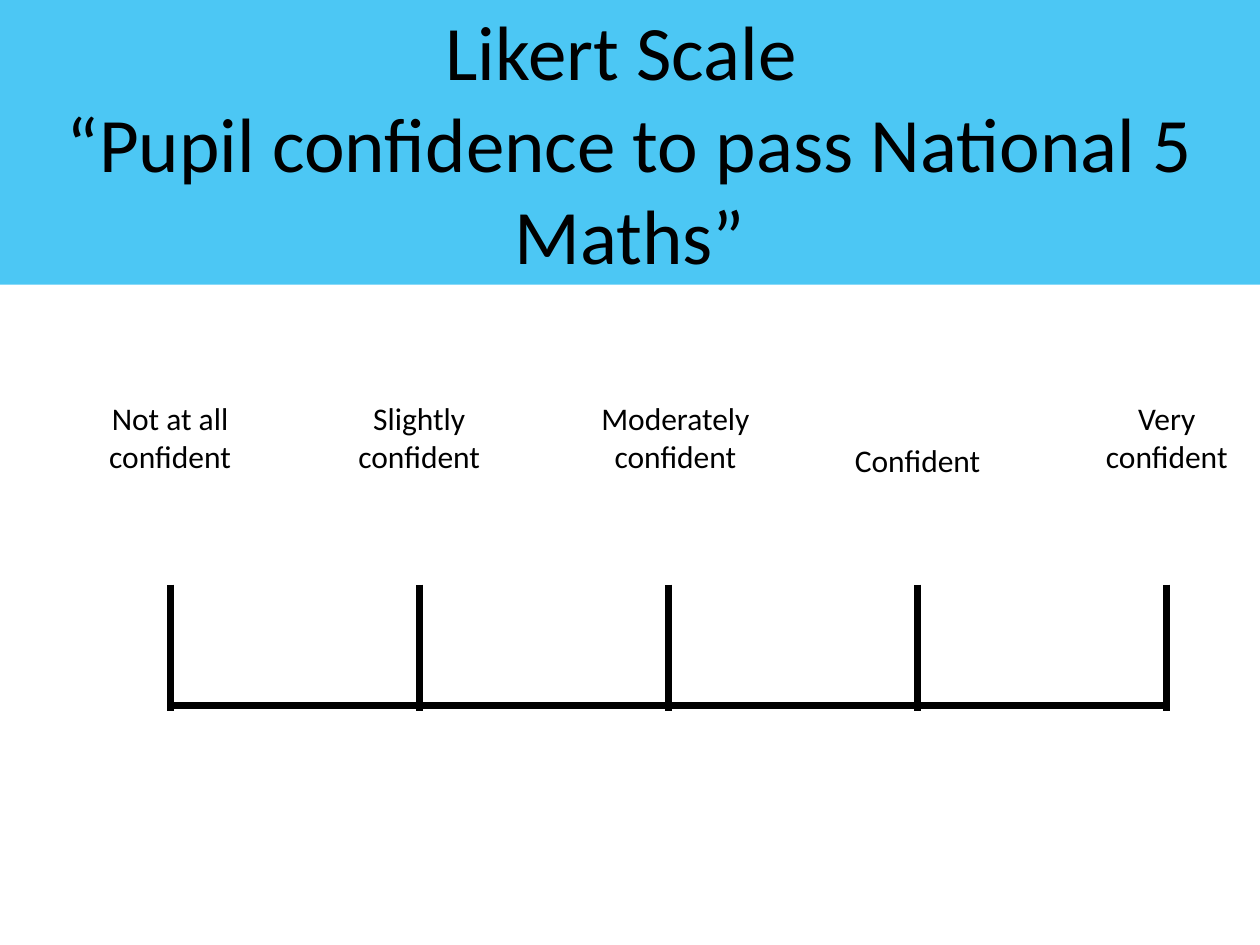
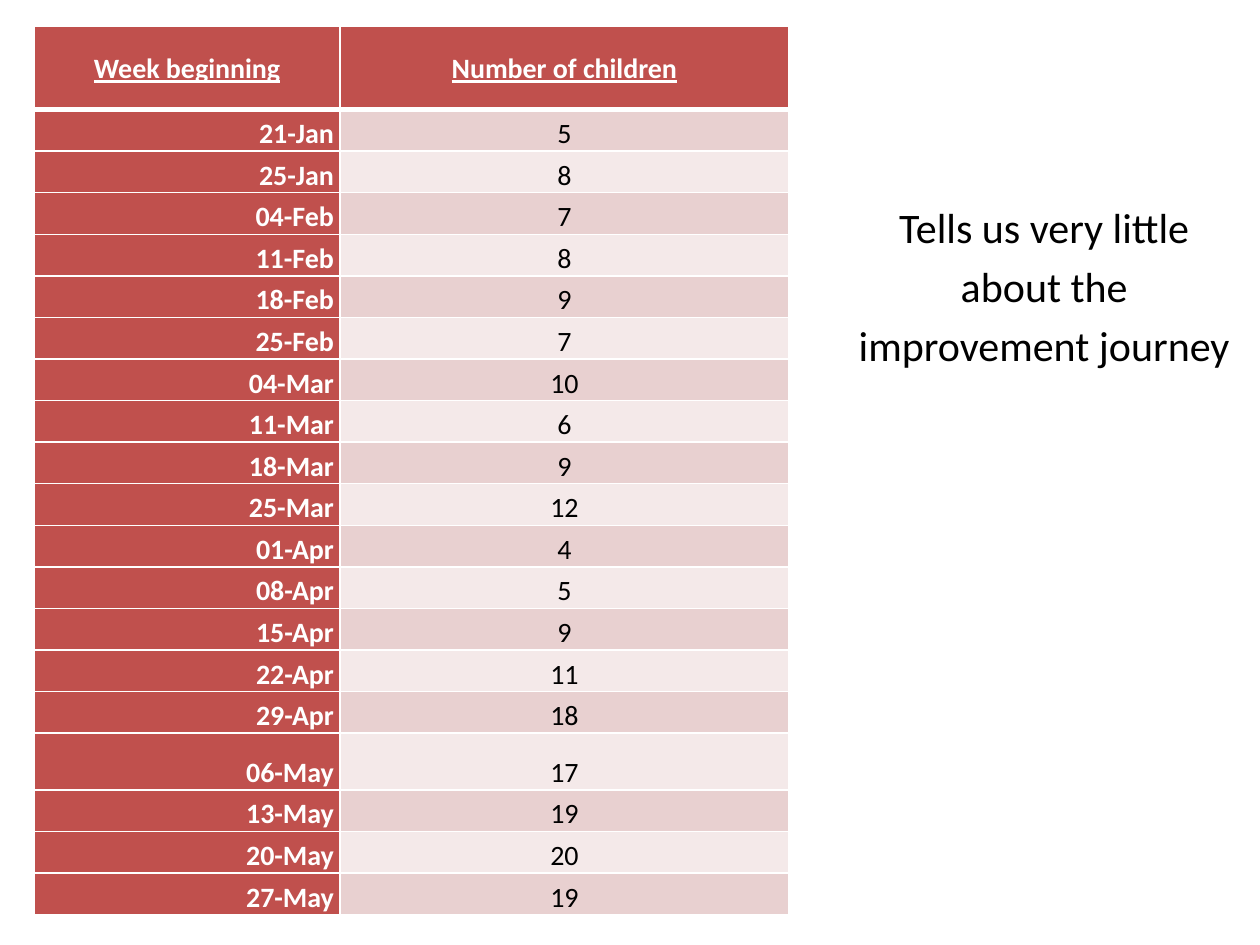
"""Builds two slides: a Likert scale and a table of weekly counts."""
from lxml import etree
from pptx import Presentation
from pptx.dml.color import RGBColor
from pptx.enum.shapes import MSO_CONNECTOR as LINK, MSO_SHAPE as SHAPE
from pptx.enum.text import MSO_ANCHOR as ANCHOR, MSO_AUTO_SIZE as AUTO, PP_ALIGN as ALIGN
from pptx.oxml.ns import qn
from pptx.util import Inches, Pt

FONT = "Calibri"
BLACK = RGBColor(0x00, 0x00, 0x00)
WHITE = RGBColor(0xFF, 0xFF, 0xFF)
BLUE = RGBColor(0x00, 0xB0, 0xF0)
RED = RGBColor(0xC0, 0x50, 0x4D)
ROSE = RGBColor(0xE8, 0xD0, 0xD0)
PALE = RGBColor(0xF4, 0xE9, 0xE9)


def write(frame, text, size, color=BLACK, align=ALIGN.CENTER, bold=False):
    frame.text = text
    frame.word_wrap = True
    for par in frame.paragraphs:
        par.alignment = align
        for run in par.runs:
            run.font.name = FONT
            run.font.size = Pt(size)
            run.font.bold = bold
            run.font.color.rgb = color


def rule(shapes, x1, y1, x2, y2):
    line = shapes.add_connector(LINK.STRAIGHT, Inches(x1), Inches(y1), Inches(x2), Inches(y2))
    line.line.color.rgb = BLACK
    line.line.width = Pt(4)
    etree.SubElement(line._element.spPr, qn("a:effectLst"))


prs = Presentation()
prs.slide_width = Inches(10)
prs.slide_height = Inches(7.5)
blank = prs.slide_layouts[6]

slide = prs.slides.add_slide(blank)
band = slide.shapes.add_shape(SHAPE.RECTANGLE, 0, Inches(-0.01), Inches(10), Inches(2.27))
band.shadow.inherit = False
band.fill.solid()
band.fill.fore_color.rgb = BLUE
tint = band._element.spPr.find(qn("a:solidFill"))[0]
etree.SubElement(tint, qn("a:alpha"), val="70000")
band.line.fill.background()
frame = band.text_frame
frame.margin_left = frame.margin_right = Inches(0.07)
frame.margin_top = frame.margin_bottom = Inches(0.04)
frame.vertical_anchor = ANCHOR.MIDDLE
write(frame, "Likert Scale \n“Pupil confidence to pass National 5 Maths”", 44)

scale = slide.shapes.add_group_shape().shapes
first, last = 1.35, 9.26
step = (last - first) / 4
rule(scale, first, 5.6, last, 5.6)
labels = [
    ("Not at all confident", 3.12, 1.34, 1.78),
    ("Slightly confident", 3.12, 1.34, 1.78),
    ("Moderately confident", 3.12, 1.45, 1.78),
    ("Confident", 3.45, 1.34, 1.02),
    ("Very confident", 3.12, 1.34, 1.78),
]
for i, (text, top, width, height) in enumerate(labels):
    x = first + i * step
    rule(scale, x, 4.64, x, 5.64)
    box = scale.add_textbox(Inches(x - 0.67), Inches(top), Inches(width), Inches(height))
    write(box.text_frame, text, 18)
    box.text_frame.auto_size = AUTO.SHAPE_TO_FIT_TEXT

slide = prs.slides.add_slide(blank)
rows = [
    ("Week beginning", "Number of children"),
    ("21-Jan", 5), ("25-Jan", 8), ("04-Feb", 7), ("11-Feb", 8),
    ("18-Feb", 9), ("25-Feb", 7), ("04-Mar", 10), ("11-Mar", 6),
    ("18-Mar", 9), ("25-Mar", 12), ("01-Apr", 4), ("08-Apr", 5),
    ("15-Apr", 9), ("22-Apr", 11), ("29-Apr", 18), ("06-May", 17),
    ("13-May", 19), ("20-May", 20), ("27-May", 19),
]
tall = {0: 0.66, 16: 0.45}
table = slide.shapes.add_table(
    len(rows), 2, Inches(0.27), Inches(0.21), Inches(5.99), Inches(7.04)).table
table.columns[0].width = Inches(2.43)
table.columns[1].width = Inches(3.56)
for r, row in enumerate(rows):
    table.rows[r].height = Inches(tall.get(r, 0.33))
    head = r == 0
    for c, value in enumerate(row):
        cell = table.cell(r, c)
        strong = head or c == 0
        align = ALIGN.RIGHT if c == 0 and not head else ALIGN.CENTER
        write(cell.text_frame, str(value), 16, WHITE if strong else BLACK, align, strong)
        par = cell.text_frame.paragraphs[0]
        par.line_spacing = 1.07
        par.runs[0].font.underline = head
        cell.vertical_anchor = ANCHOR.MIDDLE if head else ANCHOR.BOTTOM
        cell.margin_left = cell.margin_right = Inches(0.05)
        cell.margin_top = cell.margin_bottom = 0
        thick = {0: "lnB", 1: "lnT"}.get(r)
        for side in ("lnL", "lnR", "lnT", "lnB"):
            width = Pt(3 if side == thick else 1)
            edge = etree.SubElement(cell._tc.get_or_add_tcPr(), qn("a:" + side), w=str(width))
            fill = etree.SubElement(edge, qn("a:solidFill"))
            etree.SubElement(fill, qn("a:srgbClr"), val=str(WHITE))
        cell.fill.solid()
        cell.fill.fore_color.rgb = RED if strong else ROSE if r % 2 else PALE

note = slide.shapes.add_textbox(Inches(6.65), Inches(1.55), Inches(3.35), Inches(1.5))
write(note.text_frame, "Tells us very little \nabout the \nimprovement journey ", 24)
for par in note.text_frame.paragraphs:
    par.space_before = Pt(4.8)

prs.save("out.pptx")
